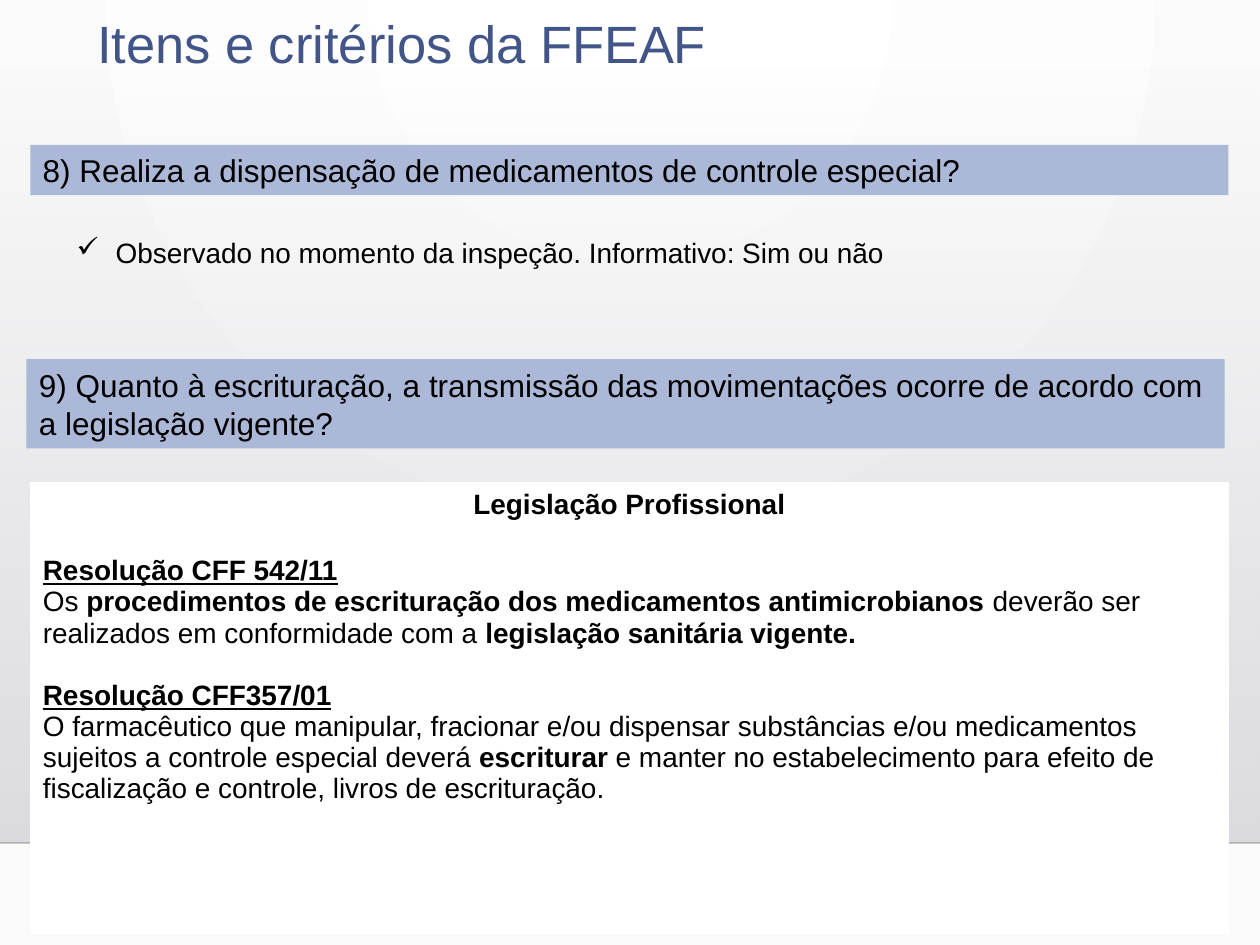
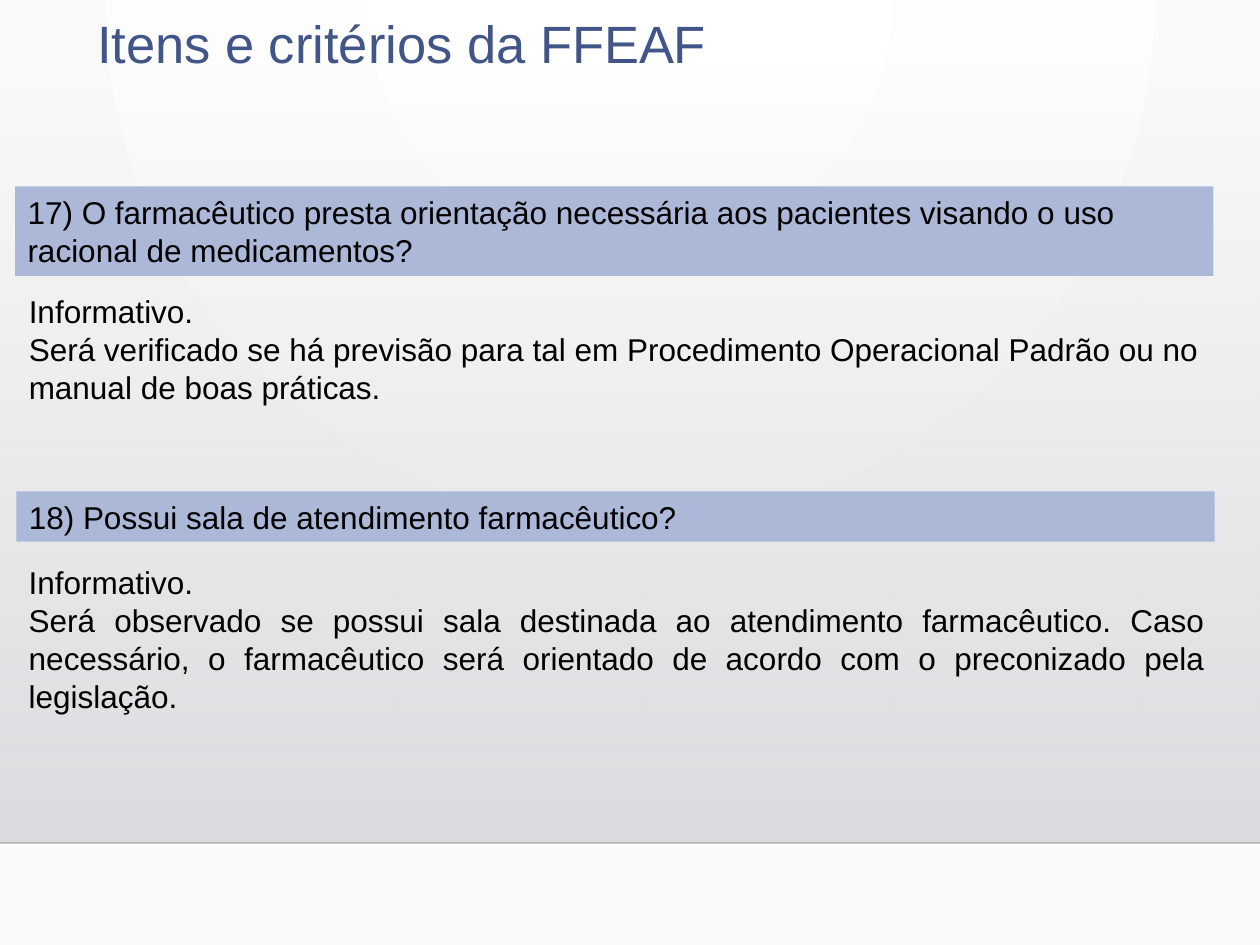
from lxml.etree import SubElement
from pptx import Presentation
from pptx.dml.color import RGBColor
from pptx.enum.shapes import MSO_CONNECTOR, MSO_SHAPE
from pptx.enum.text import MSO_ANCHOR, PP_ALIGN
from pptx.oxml.ns import qn
from pptx.util import Inches, Pt

BLACK = RGBColor(0x00, 0x00, 0x00)
WHITE = RGBColor(0xFF, 0xFF, 0xFF)
OFF_WHITE = RGBColor(0xFA, 0xFA, 0xFA)
BAND_TOP = RGBColor(0xDC, 0xDC, 0xE0)
BAND_BOTTOM = RGBColor(0xDE, 0xDE, 0xE2)
RULE = RGBColor(0x00, 0x00, 0x01)
TITLE_BLUE = RGBColor(0x41, 0x55, 0x88)
QUESTION_BLUE = RGBColor(0xAB, 0xB8, 0xD7)
FONT = "Arial"
TITLE = "Itens e critérios da FFEAF"


def set_font(paragraph, size, color=BLACK):
    paragraph.font.name = FONT
    paragraph.font.size = Pt(size)
    paragraph.font.color.rgb = color


def write_paragraphs(text_frame, texts, size, alignment=PP_ALIGN.LEFT):
    text_frame.word_wrap = True
    for index, text in enumerate(texts):
        paragraph = text_frame.add_paragraph() if index else text_frame.paragraphs[0]
        paragraph.text = text
        paragraph.alignment = alignment
        set_font(paragraph, size)


presentation = Presentation()
presentation.slide_width = Inches(10)
presentation.slide_height = Inches(7.5)
title_only = presentation.slide_layouts[5]
inspection_slide = presentation.slides.add_slide(title_only)
guidance_slide = presentation.slides.add_slide(title_only)

master = presentation.slide_master
background = master.background.fill
background.gradient()
for stop, color in zip(background.gradient_stops, (WHITE, OFF_WHITE)):
    stop.color.rgb = color
gradient = master.element.find(".//" + qn("p:bgPr")).find(qn("a:gradFill"))
gradient.remove(gradient.find(qn("a:lin")))
circle = SubElement(gradient, qn("a:path"), path="circle")
SubElement(circle, qn("a:fillToRect"), l="43000", t="0", r="43000", b="100000")

band = inspection_slide.shapes.add_shape(
    MSO_SHAPE.RECTANGLE, 0, Inches(0.51), Inches(10), Inches(6.18))
band.shadow.inherit = False
band.line.fill.background()
band.fill.gradient()
band.fill.gradient_angle = 270
for stop, color in zip(band.fill.gradient_stops, (BAND_TOP, BAND_BOTTOM)):
    stop.color.rgb = color
first_color = band.element.spPr.find(".//" + qn("a:srgbClr"))
SubElement(first_color, qn("a:alpha"), val="0")

rule = inspection_slide.shapes.add_connector(
    MSO_CONNECTOR.STRAIGHT, 0, Inches(6.69), Inches(10), Inches(6.69))
rule.line.color.rgb = RULE
rule.line.width = Pt(1)
SubElement(rule.line._ln.find(".//" + qn("a:srgbClr")), qn("a:alpha"), val="20000")
SubElement(rule._element.spPr, qn("a:effectLst"))

for position, shape in enumerate((band, rule), start=2):
    master.shapes._spTree.insert(position, shape._element)

for slide in presentation.slides:
    title = slide.shapes.title
    title.left, title.top = Inches(0.67), Inches(0.09)
    title.width, title.height = Inches(5.87), Inches(0.87)
    title.text_frame.vertical_anchor = MSO_ANCHOR.TOP
    title.text_frame.text = TITLE
    paragraph = title.text_frame.paragraphs[0]
    paragraph.alignment = PP_ALIGN.LEFT
    paragraph.line_spacing = 0.9
    set_font(paragraph, 30, TITLE_BLUE)

questions = [
    (inspection_slide, 0.24, 1.15, 0.4,
     "8) Realiza a dispensação de medicamentos de controle especial?"),
    (inspection_slide, 0.21, 2.85, 0.71,
     "9) Quanto à escrituração, a transmissão das movimentações ocorre de acordo com a legislação vigente?"),
    (guidance_slide, 0.12, 1.48, 0.71,
     "17) O farmacêutico presta orientação necessária aos pacientes visando o uso racional de medicamentos?"),
    (guidance_slide, 0.13, 3.9, 0.4,
     "18) Possui sala de atendimento farmacêutico?"),
]
for slide, left, top, height, text in questions:
    question = slide.shapes.add_shape(
        MSO_SHAPE.RECTANGLE, Inches(left), Inches(top), Inches(9.51), Inches(height))
    question.shadow.inherit = False
    question.fill.solid()
    question.fill.fore_color.rgb = QUESTION_BLUE
    question.line.fill.background()
    write_paragraphs(question.text_frame, [text], 18)

observation = inspection_slide.shapes.add_textbox(
    Inches(0.51), Inches(1.82), Inches(7.16), Inches(0.37))
paragraph = observation.text_frame.paragraphs[0]
properties = paragraph._p.get_or_add_pPr()
properties.set("marL", str(Inches(0.31)))
properties.set("indent", str(-Inches(0.31)))
SubElement(properties, qn("a:buChar"), char="✓")
write_paragraphs(
    observation.text_frame,
    ["Observado no momento da inspeção. Informativo: Sim ou não"], 16, PP_ALIGN.JUSTIFY)

answers = [
    (2.27, 9.51, 1.01, PP_ALIGN.LEFT,
     "Será verificado se há previsão para tal em Procedimento Operacional Padrão ou no manual de boas práticas."),
    (4.42, 9.53, 1.62, PP_ALIGN.JUSTIFY,
     "Será observado se possui sala destinada ao atendimento farmacêutico. Caso necessário, "
     "o farmacêutico será orientado de acordo com o preconizado pela legislação."),
]
for top, width, height, alignment, text in answers:
    answer = guidance_slide.shapes.add_textbox(
        Inches(0.13), Inches(top), Inches(width), Inches(height))
    write_paragraphs(answer.text_frame, ["Informativo.", text], 18, alignment)

table = inspection_slide.shapes.add_table(
    2, 1, Inches(0.24), Inches(3.83), Inches(9.51), Inches(3.58)).table
table.horz_banding = False
table.rows[0].height = Inches(0.53)
table.rows[1].height = Inches(3.05)
heading, resolutions = table.cell(0, 0), table.cell(1, 0)
for cell in (heading, resolutions):
    cell.fill.solid()
    cell.fill.fore_color.rgb = WHITE
write_paragraphs(heading.text_frame, ["Legislação Profissional"], 16, PP_ALIGN.CENTER)
heading.text_frame.paragraphs[0].font.bold = True

resolution_texts = [
    ("Resolução CFF 542/11", [
        ("Os ", False),
        ("procedimentos de escrituração dos medicamentos antimicrobianos ", True),
        ("deverão ser realizados em conformidade com a ", False),
        ("legislação sanitária vigente.", True),
    ]),
    ("Resolução CFF357/01", [
        ("O farmacêutico que manipular, fracionar e/ou dispensar substâncias e/ou medicamentos "
         "sujeitos a controle especial deverá ", False),
        ("escriturar", True),
        (" e manter no estabelecimento para efeito de fiscalização e controle, "
         "livros de escrituração.", False),
    ]),
]
text_frame = resolutions.text_frame
for index, (name, parts) in enumerate(resolution_texts):
    paragraph = text_frame.add_paragraph() if index else text_frame.paragraphs[0]
    paragraph.text = name
    if index:
        paragraph.space_before = Pt(18)
    set_font(paragraph, 16)
    paragraph.font.bold = True
    paragraph.font.underline = True
    paragraph = text_frame.add_paragraph()
    set_font(paragraph, 16)
    for text, bold in parts:
        run = paragraph.add_run()
        run.text = text
        run.font.bold = bold

presentation.save("out.pptx")
